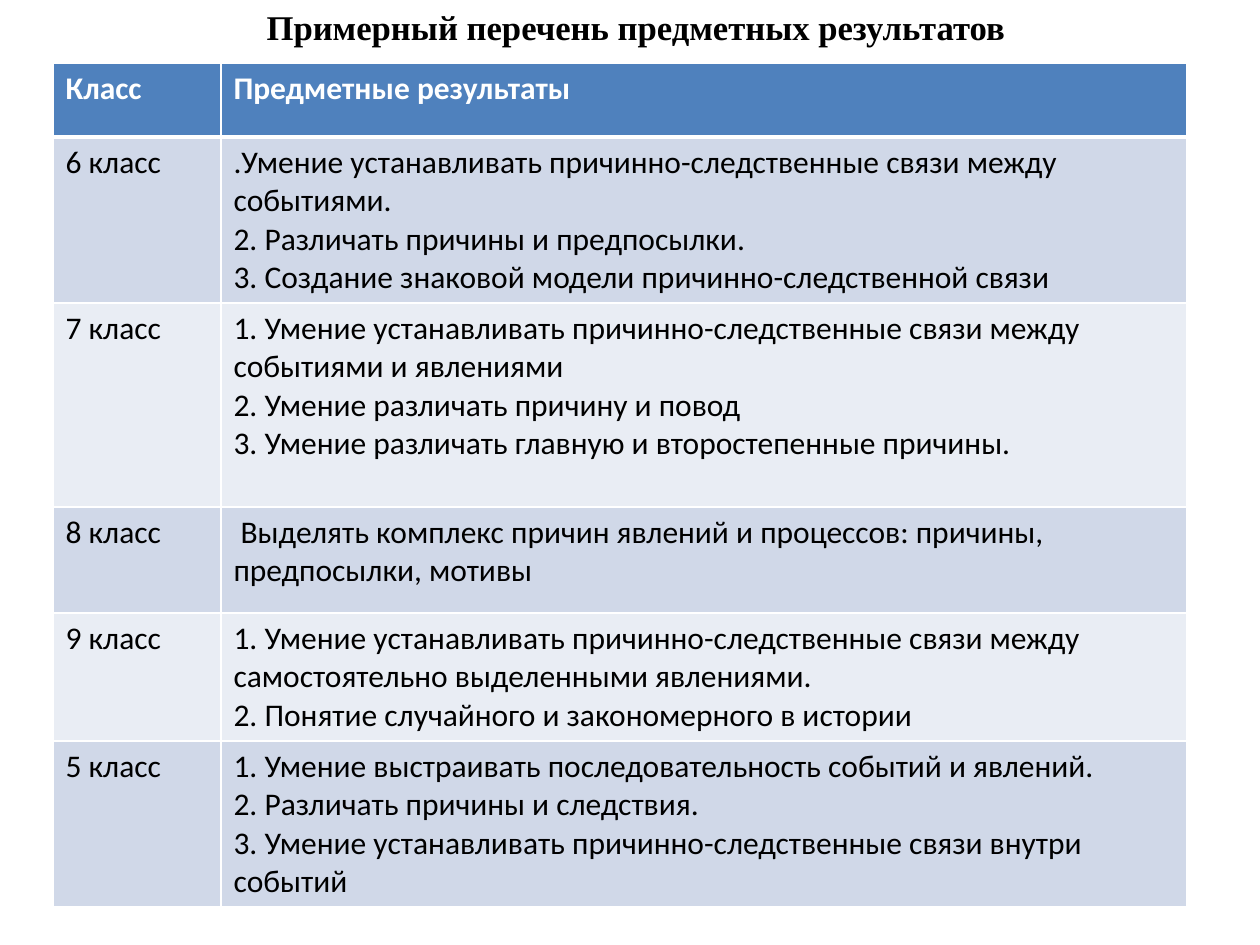
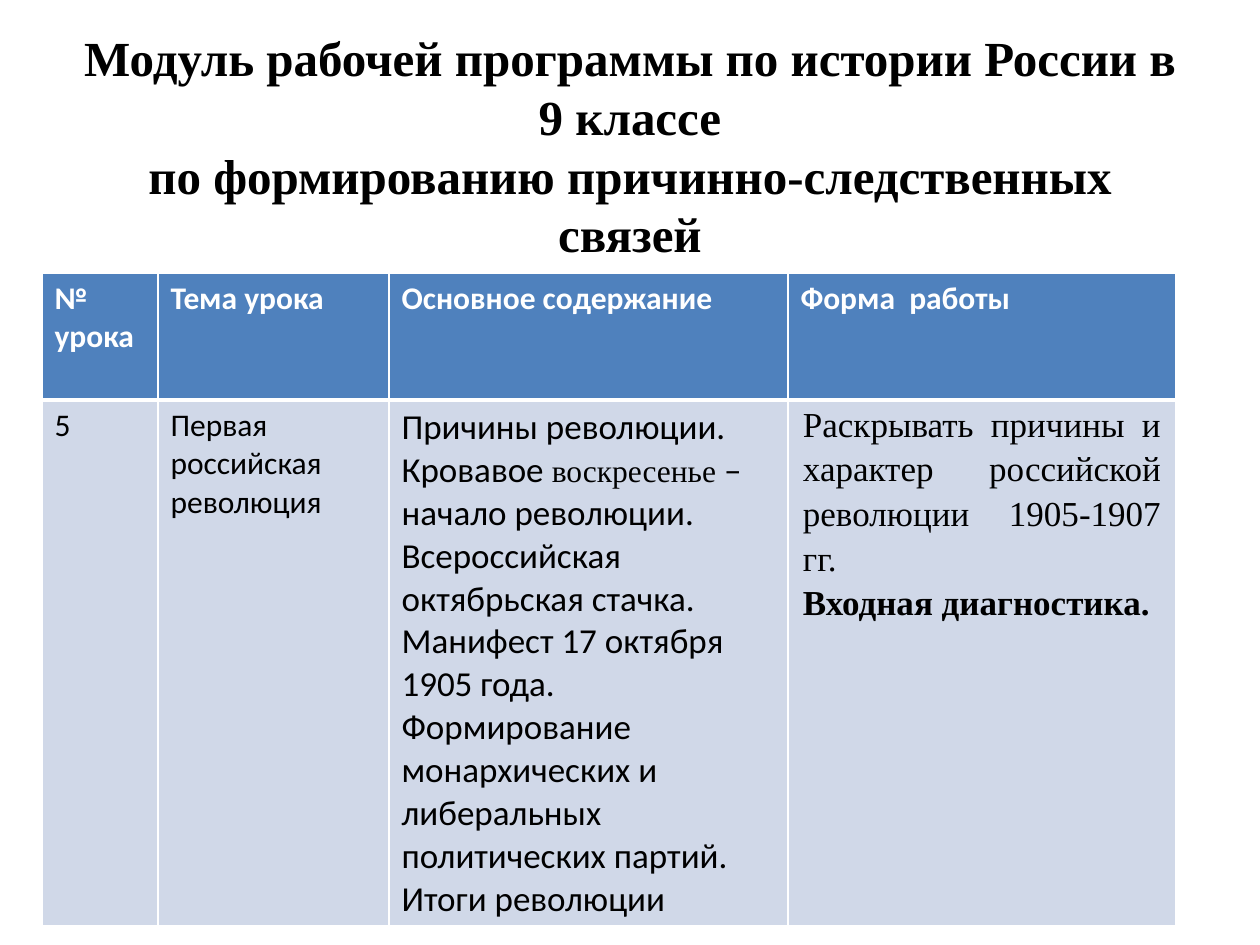
from lxml import etree
from pptx import Presentation
from pptx import util as u
from pptx.dml.color import RGBColor
from pptx.enum import text
from pptx.oxml.ns import qn

# Shared look
COLORS = {"ink": "000000", "paper": "FFFFFF", "header": "4F81BD",
          "odd": "D0D8E8", "even": "E9EDF4"}
BODY, SERIF = "Calibri", "Times New Roman"
EMU_PER_PX = 914400 / 126
TABLE_WIDTH = 1134

# Cell text: a string, a list of paragraphs, or a dict with its own format.
# A paragraph is a string or a list of (text, font overrides) runs.
LARGE, LARGE_SERIF = {"size": 20}, {"size": 20, "name": SERIF}

RESULTS = [
    ("Класс", "Предметные результаты"),
    ("6 класс", [
        ".Умение устанавливать причинно-следственные связи между событиями.",
        "2. Различать причины и предпосылки.",
        "3. Создание знаковой модели причинно-следственной связи"]),
    ("7 класс", [
        "1. Умение устанавливать причинно-следственные связи между событиями и явлениями",
        "2. Умение различать причину и повод",
        "3. Умение различать главную и второстепенные причины."]),
    ("8 класс", " Выделять комплекс причин явлений и процессов: причины, предпосылки, мотивы"),
    ("9 класс", [
        "1. Умение устанавливать причинно-следственные связи между самостоятельно "
        "выделенными явлениями.",
        "2. Понятие случайного и закономерного в истории"]),
    ("5 класс", [
        "1. Умение выстраивать последовательность событий и явлений.",
        "2. Различать причины и следствия.",
        "3. Умение устанавливать причинно-следственные связи внутри событий"]),
]

LESSONS = [
    (["№", "урока"], "Тема урока", "Основное содержание", "Форма  работы"),
    ("5", "Первая российская революция",
     [[("Причины революции. Кровавое ", LARGE),
       ("воскресенье", {"name": SERIF}),
       (" – начало революции. Всероссийская октябрьская стачка. Манифест 17 октября "
        "1905 года. Формирование монархических и либеральных политических партий. "
        "Итоги революции", LARGE)]],
     {"paragraphs": [
         [("Раскрывать причины и характер российской революции 1905-1907 гг.", LARGE_SERIF)],
         [("Входная диагностика.", {**LARGE_SERIF, "bold": True})]],
      "layout": {"alignment": text.PP_ALIGN.JUSTIFY, "line_spacing": 1.15},
      "margins": {"margin_left": 15, "margin_top": 0,
                  "margin_right": 15, "margin_bottom": 0}}),
]

SLIDES = [
    {"title": "Примерный перечень предметных результатов ",
     "title_box": (73, 0, 1134, 105), "title_size": 19.8, "title_bottom": 57,
     "table_at": (53, 63), "columns": (168, 966),
     "heights": (74, 166, 204, 106, 128, 166), "rows": RESULTS},
    {"title": "Модуль рабочей программы по истории России в 9 классе\v"
              "по формированию причинно-следственных связей",
     "title_box": (63, 38, 1134, 214), "title_size": 28, "title_bottom": 6,
     "table_at": (42, 273), "columns": (116, 231, 399, 388),
     "heights": (127, 526), "rows": LESSONS},
]


def px(length):
    return u.Emu(round(length * EMU_PER_PX))


def apply(target, values):
    for name, value in values.items():
        setattr(target, name, value)


def style_font(font, size, color, **values):
    font.size = u.Pt(size)
    font.color.rgb = RGBColor.from_string(COLORS[color])
    apply(font, values)


def add_title(slide, content):
    frame = slide.shapes.add_textbox(*map(px, content["title_box"])).text_frame
    apply(frame, {"word_wrap": True, "vertical_anchor": text.MSO_ANCHOR.MIDDLE,
                  "margin_bottom": px(content["title_bottom"])})
    paragraph = frame.paragraphs[0]
    paragraph.text = content["title"]
    paragraph.alignment = text.PP_ALIGN.CENTER
    for run in paragraph.runs:
        style_font(run.font, content["title_size"], "ink", name=SERIF, bold=True)


def set_borders(cell, row_index):
    """White rules, thicker between the header and the body."""
    widths = {"lnL": 1, "lnR": 1,
              "lnT": 3 if row_index == 1 else 1,
              "lnB": 3 if row_index == 0 else 1}
    properties = cell._tc.get_or_add_tcPr()
    for position, (side, width) in enumerate(widths.items()):
        line = etree.Element(qn("a:" + side), w=str(u.Pt(width)))
        fill = etree.SubElement(line, qn("a:solidFill"))
        etree.SubElement(fill, qn("a:srgbClr"), val=COLORS["paper"])
        properties.insert(position, line)


def fill_cell(cell, content, row_index):
    is_header = row_index == 0
    if not isinstance(content, dict):
        content = {"paragraphs": [content] if isinstance(content, str) else content}
    apply(cell, {side: px(size) for side, size in content.get("margins", {}).items()})
    for index, runs in enumerate(content["paragraphs"]):
        frame = cell.text_frame
        paragraph = frame.add_paragraph() if index else frame.paragraphs[0]
        apply(paragraph, content.get("layout", {}))
        for words, overrides in [(runs, {})] if isinstance(runs, str) else runs:
            run = paragraph.add_run()
            run.text = words
            style_font(run.font, **{"size": 18, "color": "paper" if is_header else "ink",
                                    "name": BODY, "bold": is_header, **overrides})
    band = "header" if is_header else ("odd" if row_index % 2 else "even")
    cell.fill.solid()
    cell.fill.fore_color.rgb = RGBColor.from_string(COLORS[band])
    set_borders(cell, row_index)


def add_grid(slide, content):
    rows, columns, heights = content["rows"], content["columns"], content["heights"]
    left, top = content["table_at"]
    table = slide.shapes.add_table(len(rows), len(columns), px(left), px(top),
                                   px(TABLE_WIDTH), px(sum(heights))).table
    for column, width in zip(table.columns, columns):
        column.width = px(width)
    for row_index, (row, height) in enumerate(zip(table.rows, heights)):
        row.height = px(height)
        for cell, words in zip(row.cells, rows[row_index]):
            fill_cell(cell, words, row_index)


def main():
    presentation = Presentation()
    apply(presentation, {"slide_width": u.Inches(10), "slide_height": u.Inches(7.5)})
    for content in SLIDES:
        slide = presentation.slides.add_slide(presentation.slide_layouts[6])
        add_title(slide, content)
        add_grid(slide, content)
    presentation.save("out.pptx")


if __name__ == "__main__":
    main()
